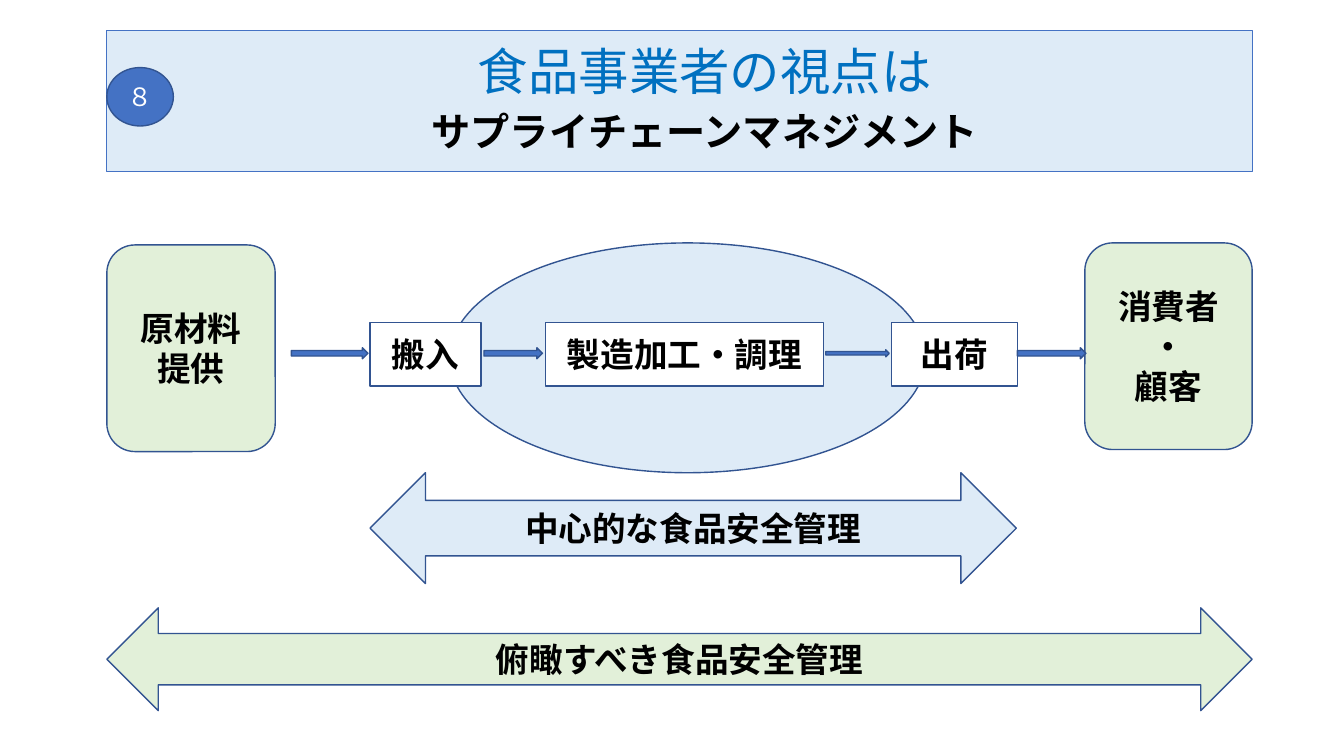
from pptx import Presentation
from pptx.dml.color import RGBColor
from pptx.enum.shapes import MSO_SHAPE
from pptx.enum.text import MSO_ANCHOR, PP_ALIGN
from pptx.oxml.ns import qn
from pptx.util import Emu, Pt

RECT = MSO_SHAPE.RECTANGLE
ROUND = MSO_SHAPE.ROUNDED_RECTANGLE
OVAL = MSO_SHAPE.OVAL
ARROW = MSO_SHAPE.RIGHT_ARROW
SPAN = MSO_SHAPE.LEFT_RIGHT_ARROW
MIDDLE = MSO_ANCHOR.MIDDLE
CENTER = PP_ALIGN.CENTER

FONT = "Noto Sans CJK JP"
BLUE, EDGE = "4472C4", "325491"
PALE, GREEN = "DEEBF7", "E2F0D9"
WHITE, BLACK, SKY = "FFFFFF", "000000", "0070C0"


def px(n):
    """Turn px, a hundred to the inch, into EMU."""
    return Emu(n * 9144)


def rgb(code):
    """Turn a hex string into a colour."""
    return RGBColor.from_string(code)


def style(run, size, color, bold):
    """Give a run its font for Latin and East Asian text."""
    form = {"name": FONT, "size": Pt(size), "bold": bold}
    for key, value in form.items():
        setattr(run.font, key, value)
    run.font.color.rgb = rgb(color)
    east = run.font._element.makeelement(qn("a:ea"), {"typeface": FONT})
    run.font._element.find(qn("a:latin")).addnext(east)


def draw(slide, kind, box, fill, lines=(), edge=EDGE, width=1,
         size=24, color=BLACK, bold=True):
    """Draw a shape with centred lines of text and return it."""
    shape = slide.shapes.add_shape(kind, *map(px, box))
    shape.shadow.inherit = False
    shape.fill.solid()
    shape.fill.fore_color.rgb = rgb(fill)
    shape.line.color.rgb = rgb(edge)
    shape.line.width = Pt(width)
    frame = shape.text_frame
    form = {"word_wrap": True, "vertical_anchor": MIDDLE,
            "margin_left": 0, "margin_right": 0}
    for key, value in form.items():
        setattr(frame, key, value)
    for i, line in enumerate(lines):
        para = frame.paragraphs[0] if i == 0 else frame.add_paragraph()
        para.alignment = CENTER
        run = para.add_run()
        run.text = line
        style(run, size, color, bold)
    return shape


def header(slide, box):
    """Draw the title band and its number badge."""
    x, y, w, h = box
    band = draw(slide, RECT, box, PALE,
                ("食品事業者の視点は", "サプライチェーンマネジメント"),
                edge=BLUE, width=0.75)
    frame = band.text_frame
    frame.margin_left = px(50)
    top, sub = frame.paragraphs
    top.line_spacing = sub.line_spacing = 0.9
    sub.space_before = Pt(8)
    style(top.runs[0], 36, SKY, False)
    sub.runs[0].font.size = Pt(28)
    draw(slide, OVAL, (x, y + 37, 66, 58), BLUE, ("８",),
         size=18, color=WHITE, bold=False)


def flow(slide, box):
    """Draw the chain from supplier to customer."""
    x, y, w, h = box
    draw(slide, OVAL, (x + 340, y, 472, h), PALE)
    steps = ((435, 276, "製造加工・調理"), (261, 110, "搬入"),
             (778, 125, "出荷"))
    for left, wide, text in steps:
        draw(slide, RECT, (x + left, y + 79, wide, 63), WHITE, (text,))
    ends = ((0, 2, 167, ("原材料", "提供")),
            (w - 166, 0, 166, ("消費者", "・", "顧客")))
    for left, top, wide, lines in ends:
        draw(slide, ROUND, (x + left, y + top, wide, 205), GREEN, lines)
    arrows = ((183, 76, 11), (374, 58, 11), (713, 63, 7), (903, 68, 11))
    for left, wide, high in arrows:
        draw(slide, ARROW, (x + left, y + 109 - high // 2, wide, high), BLUE)


def scope(slide, box, fill, text):
    """Draw a double arrow that names a range of control."""
    draw(slide, SPAN, box, fill, (text,))


def main():
    """Build the slide and save it."""
    deck = Presentation()
    deck.slide_width, deck.slide_height = px(1333), px(750)
    slide = deck.slides.add_slide(deck.slide_layouts[6])
    flow(slide, (106, 241, 1136, 228))
    scope(slide, (367, 469, 641, 110), PALE, "中心的な食品安全管理")
    scope(slide, (106, 603, 1136, 102), GREEN, "俯瞰すべき食品安全管理")
    header(slide, (106, 30, 1136, 140))
    deck.save("out.pptx")


if __name__ == "__main__":
    main()
